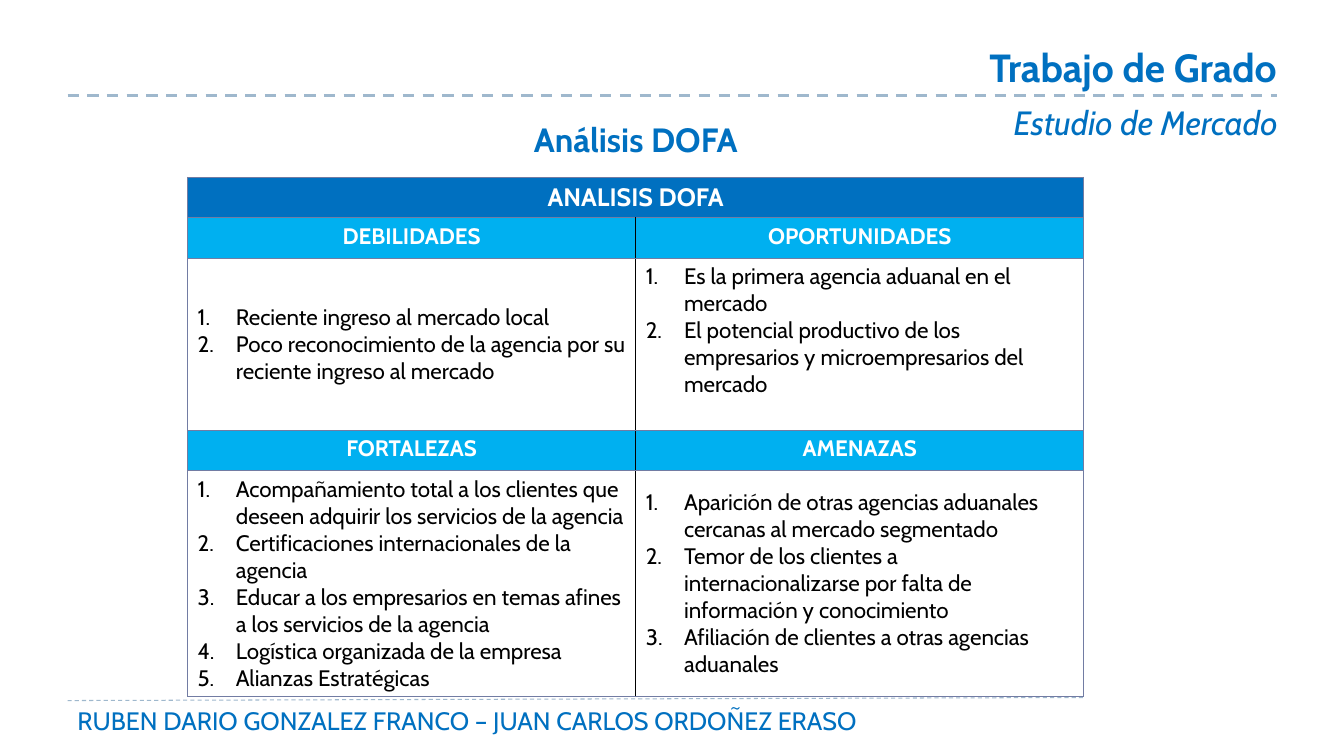
"""Build the DOFA analysis slide of a degree project."""
import pptx
import pptx.dml.color
import pptx.enum.dml
import pptx.enum.shapes
import pptx.enum.text
import pptx.oxml.ns
import pptx.util
from lxml import etree
from pptx.util import Inches

BLUE = pptx.dml.color.RGBColor(0x00, 0x70, 0xC0)
SKY = pptx.dml.color.RGBColor(0x00, 0xB0, 0xF0)
RULE = pptx.dml.color.RGBColor(0x9F, 0xB8, 0xCD)
FRAME = pptx.dml.color.RGBColor(0x72, 0x7C, 0xA3)
BLACK = pptx.dml.color.RGBColor(0, 0, 0)
WHITE = pptx.dml.color.RGBColor(0xFF, 0xFF, 0xFF)
ALIGN = pptx.enum.text.PP_ALIGN
ANCHOR = pptx.enum.text.MSO_ANCHOR
qn = pptx.oxml.ns.qn


def write(paragraph, text, size, color, bold=False, italic=False):
    run = paragraph.add_run()
    run.text = text
    run.font.name = "Cabin"
    run.font.size = pptx.util.Pt(size)
    run.font.color.rgb = color
    run.font.bold = bold
    run.font.italic = italic


def add_border(cell, side, color, width):
    line = etree.SubElement(cell._tc.get_or_add_tcPr(), qn(f"a:ln{side}"), w=str(pptx.util.Pt(width)))
    fill = etree.SubElement(line, qn("a:solidFill"))
    etree.SubElement(fill, qn("a:srgbClr"), val=str(color))


presentation = pptx.Presentation()
presentation.slide_width = Inches(13.33)
presentation.slide_height = Inches(7.5)
slide = presentation.slides.add_slide(presentation.slide_layouts[6])

for x1, y1, x2, y2, width in [(0.67, 6.95, 10.74, 6.92, 0.75), (0.67, 0.95, 12.67, 0.95, 2)]:
    rule = slide.shapes.add_connector(
        pptx.enum.shapes.MSO_CONNECTOR.STRAIGHT, Inches(x1), Inches(y1), Inches(x2), Inches(y2))
    rule.line.color.rgb = RULE
    rule.line.width = pptx.util.Pt(width)
    rule.line.dash_style = pptx.enum.dml.MSO_LINE.DASH
    etree.SubElement(rule._element.spPr, qn("a:effectLst"))

headings = [
    ("RUBEN DARIO GONZALEZ FRANCO – JUAN CARLOS ORDOÑEZ ERASO",
     (0.67, 6.95, 9.93, 0.4), 18, ALIGN.LEFT, False, False),
    ("Trabajo de Grado", (8.72, 0.38, 4.04, 0.57), 28, ALIGN.RIGHT, True, False),
    ("Estudio de Mercado", (9.2, 0.96, 3.57, 0.5), 24, ALIGN.RIGHT, False, True),
    ("Análisis DOFA", (2.08, 1.13, 8.45, 0.5), 24, ALIGN.CENTER, True, False),
]
for text, box, size, alignment, bold, italic in headings:
    frame = slide.shapes.add_textbox(*map(Inches, box)).text_frame
    frame.word_wrap = True
    frame.auto_size = pptx.enum.text.MSO_AUTO_SIZE.SHAPE_TO_FIT_TEXT
    frame.paragraphs[0].alignment = alignment
    write(frame.paragraphs[0], text, size, BLUE, bold, italic)

row_heights = [0.4, 0.4, 1.71, 0.4, 2.24]
table = slide.shapes.add_table(
    5, 2, Inches(1.86), Inches(1.76), Inches(8.89), Inches(sum(row_heights))).table
table.horz_banding = False
for column in table.columns:
    column.width = Inches(4.445)
for row, height in zip(table.rows, row_heights):
    row.height = Inches(height)

for row_index, row in enumerate(table.rows):
    for column_index, cell in enumerate(row.cells):
        inner_side = "R" if column_index == 0 else "L"
        for side in "LRTB":
            if side == inner_side and row_index > 0:
                add_border(cell, side, BLACK, 1)
            else:
                add_border(cell, side, FRAME, 0.75)

table.cell(0, 0).merge(table.cell(0, 1))
titles = [
    (0, 0, "ANALISIS DOFA", 18, BLUE),
    (1, 0, "DEBILIDADES", 16, SKY),
    (1, 1, "OPORTUNIDADES", 16, SKY),
    (3, 0, "FORTALEZAS", 16, SKY),
    (3, 1, "AMENAZAS", 16, SKY),
]
for row_index, column_index, title, size, color in titles:
    cell = table.cell(row_index, column_index)
    cell.fill.solid()
    cell.fill.fore_color.rgb = color
    paragraph = cell.text_frame.paragraphs[0]
    paragraph.alignment = ALIGN.CENTER
    write(paragraph, title, size, WHITE, bold=True)

lists = [
    (2, 0, ANCHOR.MIDDLE, [
        "Reciente ingreso al mercado local",
        "Poco reconocimiento de la agencia por su reciente ingreso al mercado"]),
    (2, 1, ANCHOR.BOTTOM, [
        "Es la primera agencia aduanal en el mercado",
        "El potencial productivo de los empresarios y microempresarios del mercado"]),
    (4, 0, ANCHOR.TOP, [
        "Acompañamiento total a los clientes que deseen adquirir los servicios de la agencia",
        "Certificaciones internacionales de la agencia",
        "Educar a los empresarios en temas afines a los servicios de la agencia",
        "Logística organizada de la empresa",
        "Alianzas Estratégicas"]),
    (4, 1, ANCHOR.MIDDLE, [
        "Aparición de otras agencias aduanales cercanas al mercado segmentado",
        "Temor de los clientes a internacionalizarse por falta de información y conocimiento",
        "Afiliación de clientes a otras agencias aduanales"]),
]
for row_index, column_index, anchor, items in lists:
    cell = table.cell(row_index, column_index)
    cell.fill.background()
    cell.vertical_anchor = anchor
    if anchor == ANCHOR.BOTTOM:
        cell.margin_bottom = Inches(0.32)
    for item_index, item in enumerate(items):
        frame = cell.text_frame
        paragraph = frame.add_paragraph() if item_index else frame.paragraphs[0]
        properties = paragraph._p.get_or_add_pPr()
        properties.set("marL", str(Inches(0.38)))
        properties.set("indent", str(Inches(-0.38)))
        etree.SubElement(properties, qn("a:buFont"), typeface="+mj-lt")
        etree.SubElement(properties, qn("a:buAutoNum"), type="arabicPeriod")
        write(paragraph, item, 16, BLACK)

presentation.save("out.pptx")
